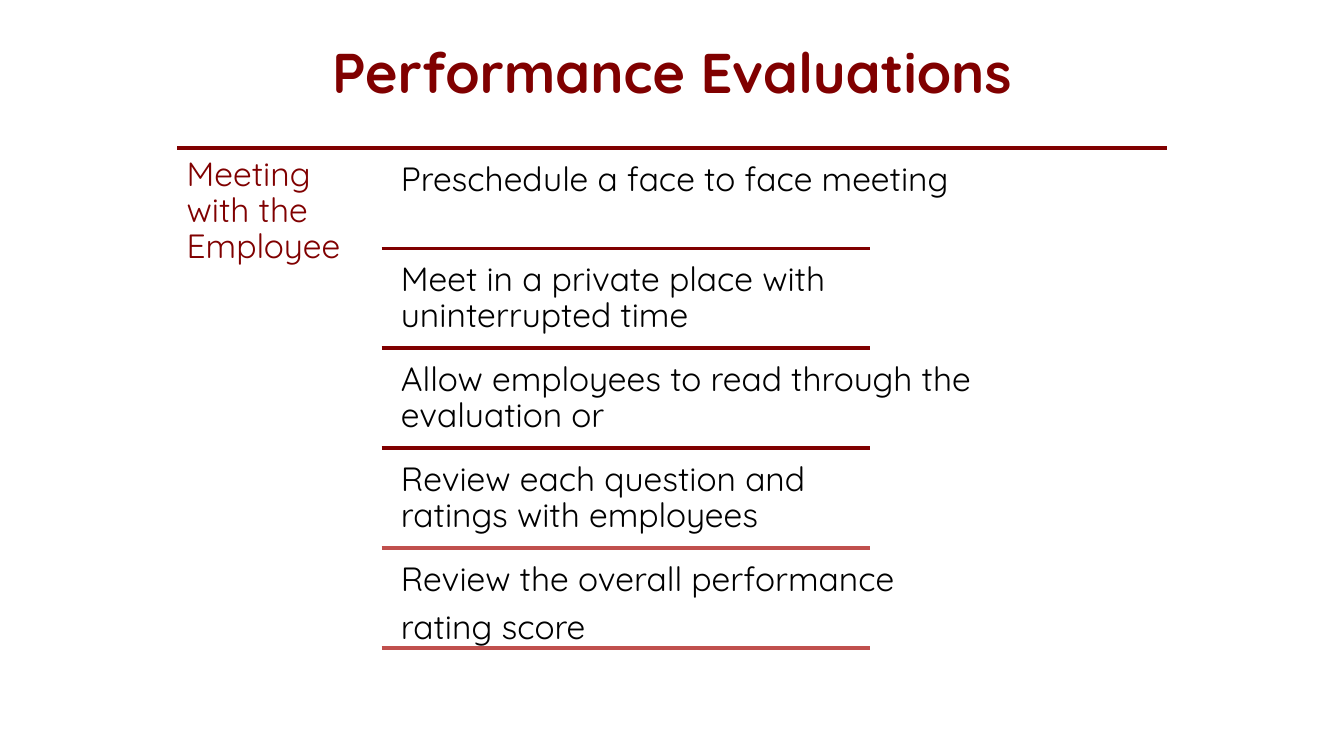
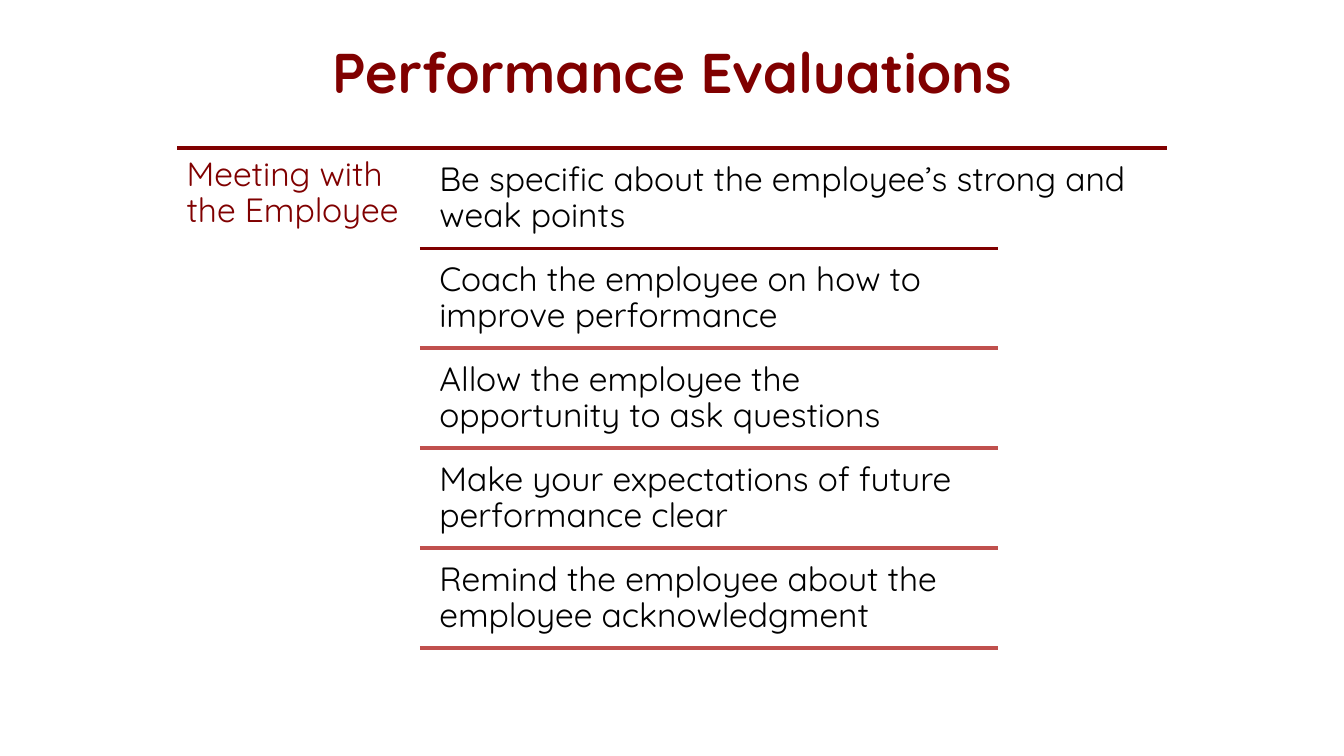
from dataclasses import dataclass

from lxml.etree import SubElement
from pptx import Presentation
from pptx.dml.color import RGBColor
from pptx.enum.shapes import MSO_CONNECTOR
from pptx.enum.text import MSO_ANCHOR, PP_ALIGN
from pptx.oxml.ns import qn
from pptx.util import Pt


@dataclass(frozen=True)
class Theme:
    font: str = "Quicksand"
    maroon: str = "800000"
    red: str = "C0504D"
    black: str = "000000"
    white: str = "FFFFFF"
    title_size: float = 30
    body_size: float = 18
    line_width: float = 2
    inset: float = 5


LEFT, RIGHT = 95, 625
TOP_RULE = 79.2
FIRST_ROW, FIRST_RULE = 82, 133.1
ROW_PITCH, ROW_HEIGHT = 53.55, 51
ROW_INDENT = 5.4


class Builder:
    def __init__(self, deck, theme):
        self.deck = deck
        self.theme = theme
        self.page = None

    def add_page(self):
        self.page = self.deck.slides.add_slide(self.deck.slide_layouts[6])
        fill = self.page.background.fill
        fill.solid()
        fill.fore_color.rgb = RGBColor.from_string(self.theme.white)

    def text_box(self, text, left, top, width, height, color, size):
        box = self.page.shapes.add_textbox(Pt(left), Pt(top), Pt(width), Pt(height))
        frame = box.text_frame
        frame.word_wrap = True
        frame.vertical_anchor = MSO_ANCHOR.TOP
        frame.text = text
        for para in frame.paragraphs:
            for span in para.runs:
                span.font.name = self.theme.font
                span.font.size = Pt(size)
                span.font.color.rgb = RGBColor.from_string(color)
        return frame

    def title(self, text):
        theme = self.theme
        frame = self.text_box(text, 36, 16.6, 648, 67.7, theme.maroon, theme.title_size)
        para = frame.paragraphs[0]
        para.alignment = PP_ALIGN.CENTER
        para.runs[0].font.bold = True

    def body(self, text, left, top, width, height, color):
        frame = self.text_box(text, left, top, width, height, color, self.theme.body_size)
        frame.margin_left = frame.margin_right = Pt(self.theme.inset)
        frame.margin_top = frame.margin_bottom = Pt(self.theme.inset)
        for para in frame.paragraphs:
            para.line_spacing = 0.9
            para.space_after = Pt(0.35 * self.theme.body_size)

    def rule(self, left, right, top, color):
        line = self.page.shapes.add_connector(
            MSO_CONNECTOR.STRAIGHT, Pt(left), Pt(top), Pt(right), Pt(top)
        )
        line.line.color.rgb = RGBColor.from_string(color)
        line.line.width = Pt(self.theme.line_width)
        SubElement(line._element.spPr, qn("a:effectLst"))

    def topic_page(self, title, topic, topic_width, rule_left, rule_right, maroon_rules, rows):
        theme = self.theme
        self.add_page()
        self.title(title)
        self.rule(LEFT, RIGHT, TOP_RULE, theme.maroon)
        self.body(topic, LEFT, TOP_RULE, topic_width, 270.7, theme.maroon)
        for index, (text, width) in enumerate(rows):
            offset = index * ROW_PITCH
            color = theme.maroon if index < maroon_rules else theme.red
            self.body(text, rule_left + ROW_INDENT, FIRST_ROW + offset, width, ROW_HEIGHT, theme.black)
            self.rule(rule_left, rule_right, FIRST_RULE + offset, color)


def main():
    deck = Presentation()
    deck.slide_width, deck.slide_height = Pt(720), Pt(405)
    builder = Builder(deck, Theme())
    title, topic = "Performance Evaluations", "Meeting with the Employee"
    builder.topic_page(title, topic, 109.4, 204.4, 466, 3, [
        ("Preschedule a face to face meeting", 327),
        ("Meet in a private place with uninterrupted time", 343),
        ("Allow employees to read through the evaluation or", 364),
        ("Review each question and ratings with employees", 256),
        ("Review the overall performance\nrating score", 415),
    ])
    builder.topic_page(title, topic, 129.6, 225, 534.8, 1, [
        ("Be specific about the employee’s strong and weak points", 394),
        ("Coach the employee on how to improve performance", 304),
        ("Allow the employee the opportunity to ask questions", 304),
        ("Make your expectations of future performance clear", 304),
        ("Remind the employee about the employee acknowledgment", 304),
    ])
    deck.save("out.pptx")


if __name__ == "__main__":
    main()
